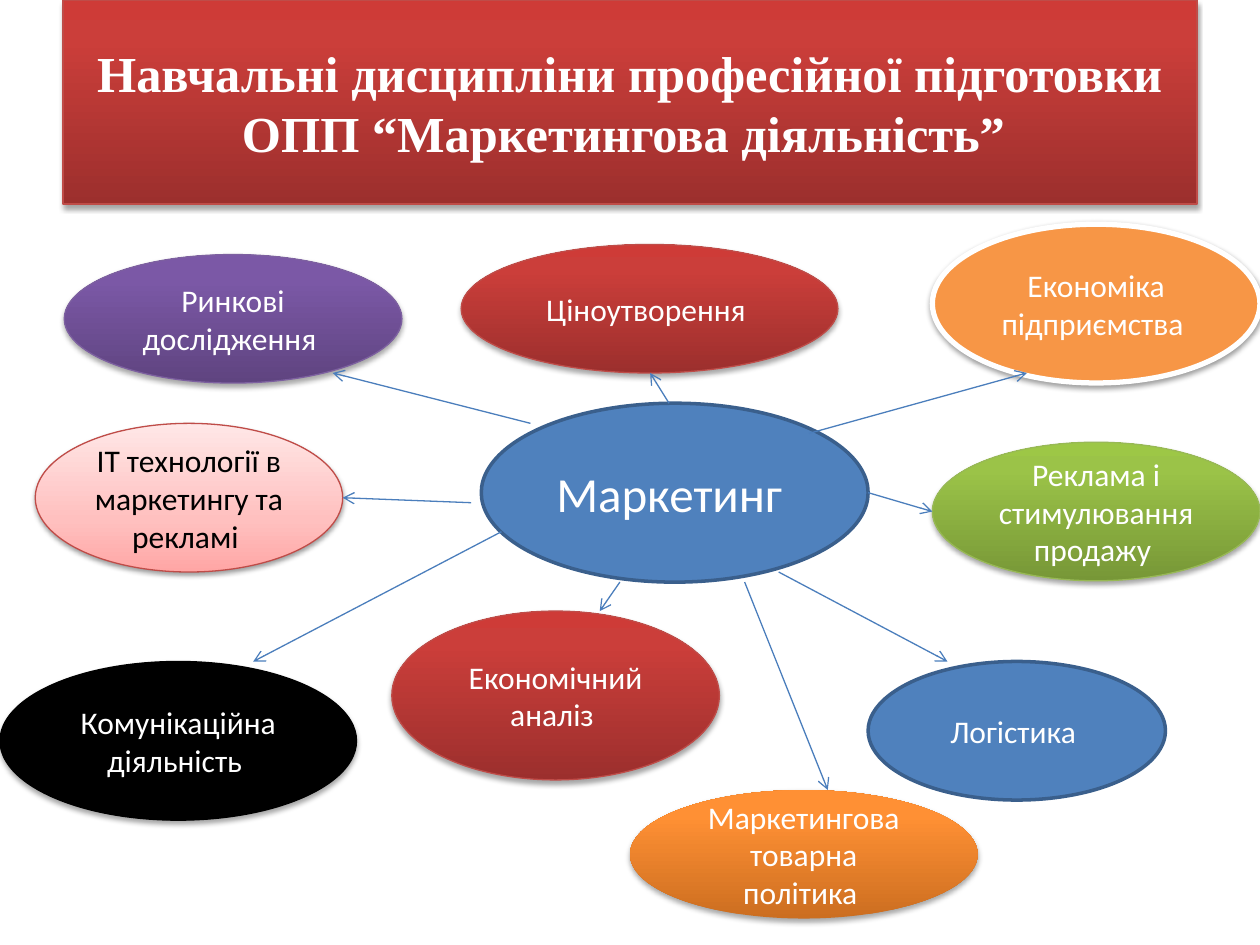
from dataclasses import dataclass

from pptx import Presentation
from pptx.dml.color import RGBColor as RGB
from pptx.enum.shapes import MSO_CONNECTOR as Link, MSO_SHAPE as Kind
from pptx.enum.text import MSO_ANCHOR as Anchor, PP_ALIGN as Align
from pptx.oxml import parse_xml
from pptx.oxml.ns import nsdecls, qn
from pptx.util import Inches, Pt


@dataclass(frozen=True)
class Look:
    fill: object  # one colour, or a tuple of (percent, colour) stops
    line: str = ""
    width: float = 0.75
    shade: tuple = ()  # opacity in percent, distance in points
    ink: str = "FFFFFF"


class Theme:
    head, body = "Times New Roman", "Calibri"
    title, hub, node = 28.8, 28, 18
    arrow = "4B7EBC"
    deep, soft = (35, 1.8), (38, 1.6)
    blue = Look("4F81BD", "3A5F8C", 2)
    black = Look("000000", "000000", shade=deep)
    amber = Look("F79646", "FFFFFF", 3, soft)
    orange = Look(((0, "CC6E20"), (80, "FF9034"), (100, "FF9136")), shade=deep)
    red = Look(((0, "9C2F2D"), (80, "CB3E3A"), (100, "CE3B37")), "BF4C48", shade=deep)
    violet = Look(((0, "5F4480"), (80, "7B58A6"), (100, "7C57A8")), "7D60A0", shade=deep)
    green = Look(((0, "779737"), (80, "9BC348"), (100, "9DC746")), "98B955", shade=deep)
    pink = Look(((0, "FFA6A5"), (35, "FFC0BF"), (100, "FFE7E7")), "BF4C48",
                shade=soft, ink="000000")


# Label, look, and left, top, width, height within the map
NODES = [
    ("Комунікаційна діяльність ", Theme.black, (0, 3.5, 2.83, 1.26)),
    ("Маркетингова товарна політика ", Theme.orange, (5, 4.52, 2.76, 1.02)),
    ("Логістика ", Theme.blue, (6.89, 3.5, 2.36, 1.1)),
    ("Економіка підприємства ", Theme.amber, (7.4, 0.03, 2.6, 1.26)),
    ("Ціноутворення ", Theme.red, (3.66, 0.19, 2.99, 1.02)),
    ("Ринкові дослідження ", Theme.violet, (0.51, 0.27, 2.68, 1.02)),
    ("Реклама і стимулювання продажу ", Theme.green, (7.4, 1.76, 2.6, 1.1)),
    ("ІТ технології в маркетингу та рекламі ", Theme.pink, (0.28, 1.61, 2.44, 1.18)),
    ("Економічний аналіз ", Theme.red, (3.11, 3.1, 2.6, 1.34)),
]

# Start x, y and end x, y within the map
ARROWS = [
    (3.74, 2.24, 2.72, 2.2),
    (3.98, 2.47, 2.01, 3.5),
    (6.18, 2.79, 7.52, 3.5),
    (5.91, 2.87, 6.57, 4.52),
    (6.42, 1.69, 8.15, 1.21),
    (5.31, 1.45, 5.16, 1.21),
    (4.21, 1.61, 2.64, 1.21),
    (4.92, 2.87, 4.76, 3.1),
    (6.89, 2.16, 7.4, 2.31),
]


def paint(shape, look):
    """Apply the fill, line and shadow of a look."""
    fill, line = shape.fill, shape.line
    if isinstance(look.fill, str):
        fill.solid()
        fill.fore_color.rgb = RGB.from_string(look.fill)
    else:
        fill.gradient()
        fill.gradient_angle = 90
        stops = shape._element.spPr.find(".//" + qn("a:gsLst"))
        stops.clear()
        for pct, color in look.fill:
            stops.append(parse_xml(
                f'<a:gs {nsdecls("a")} pos="{pct * 1000}"><a:srgbClr val="{color}"/></a:gs>'))
    if look.line:
        line.color.rgb = RGB.from_string(look.line)
        line.width = Pt(look.width)
    else:
        line.fill.background()
    shape.shadow.inherit = False
    if look.shade:
        alpha, dist = look.shade
        shape._element.spPr.find(qn("a:effectLst")).append(parse_xml(
            f'<a:outerShdw {nsdecls("a")} blurRad="{Pt(3.1)}" dist="{Pt(dist)}" '
            f'dir="5400000" rotWithShape="0"><a:srgbClr val="000000">'
            f'<a:alpha val="{alpha * 1000}"/></a:srgbClr></a:outerShdw>'))


def label(slide, kind, box, text, look, size, face=Theme.body, bold=False):
    """Draw a filled shape with centred text."""
    shape = slide.shapes.add_shape(kind, *map(Inches, box))
    paint(shape, look)
    frame = shape.text_frame
    frame.word_wrap = True
    frame.vertical_anchor = Anchor.MIDDLE
    para = frame.paragraphs[0]
    para.text = text
    para.alignment = Align.CENTER
    font = para.font
    font.name, font.size, font.bold = face, Pt(size), bold
    font.color.rgb = RGB.from_string(look.ink)


def arrow(slide, ends):
    """Draw a thin line with an open head at its end."""
    link = slide.shapes.add_connector(Link.STRAIGHT, *map(Inches, ends))
    link.line.color.rgb = RGB.from_string(Theme.arrow)
    link.line.width = Pt(0.75)
    props = link._element.spPr
    props.find(qn("a:ln")).append(parse_xml(f'<a:tailEnd {nsdecls("a")} type="arrow"/>'))
    props.append(parse_xml(f'<a:effectLst {nsdecls("a")}/>'))


def banner(slide, box):
    """Title band."""
    text = "Навчальні дисципліни професійної підготовки ОПП “Маркетингова діяльність” "
    label(slide, Kind.RECTANGLE, box, text, Theme.red, Theme.title, Theme.head, True)


def mind_map(slide, box):
    """Hub, the subjects around it, and the arrows between."""
    left, top = box[:2]

    def oval(text, look, spot, size):
        x, y, wide, high = spot
        label(slide, Kind.OVAL, (left + x, top + y, wide, high), text, look, size)

    oval("Маркетинг ", Theme.blue, (3.82, 1.45, 3.07, 1.42), Theme.hub)
    for text, look, spot in NODES:
        oval(text, look, spot, Theme.node)
    for x1, y1, x2, y2 in ARROWS:
        arrow(slide, (left + x1, top + y1, left + x2, top + y2))


def main():
    deck = Presentation()
    deck.slide_width, deck.slide_height = Inches(10), Inches(7.5)
    slide = deck.slides.add_slide(deck.slide_layouts[6])
    banner(slide, (0.5, 0, 9, 1.62))
    mind_map(slide, (0, 1.75, 10, 5.75))
    deck.save("out.pptx")


if __name__ == "__main__":
    main()
